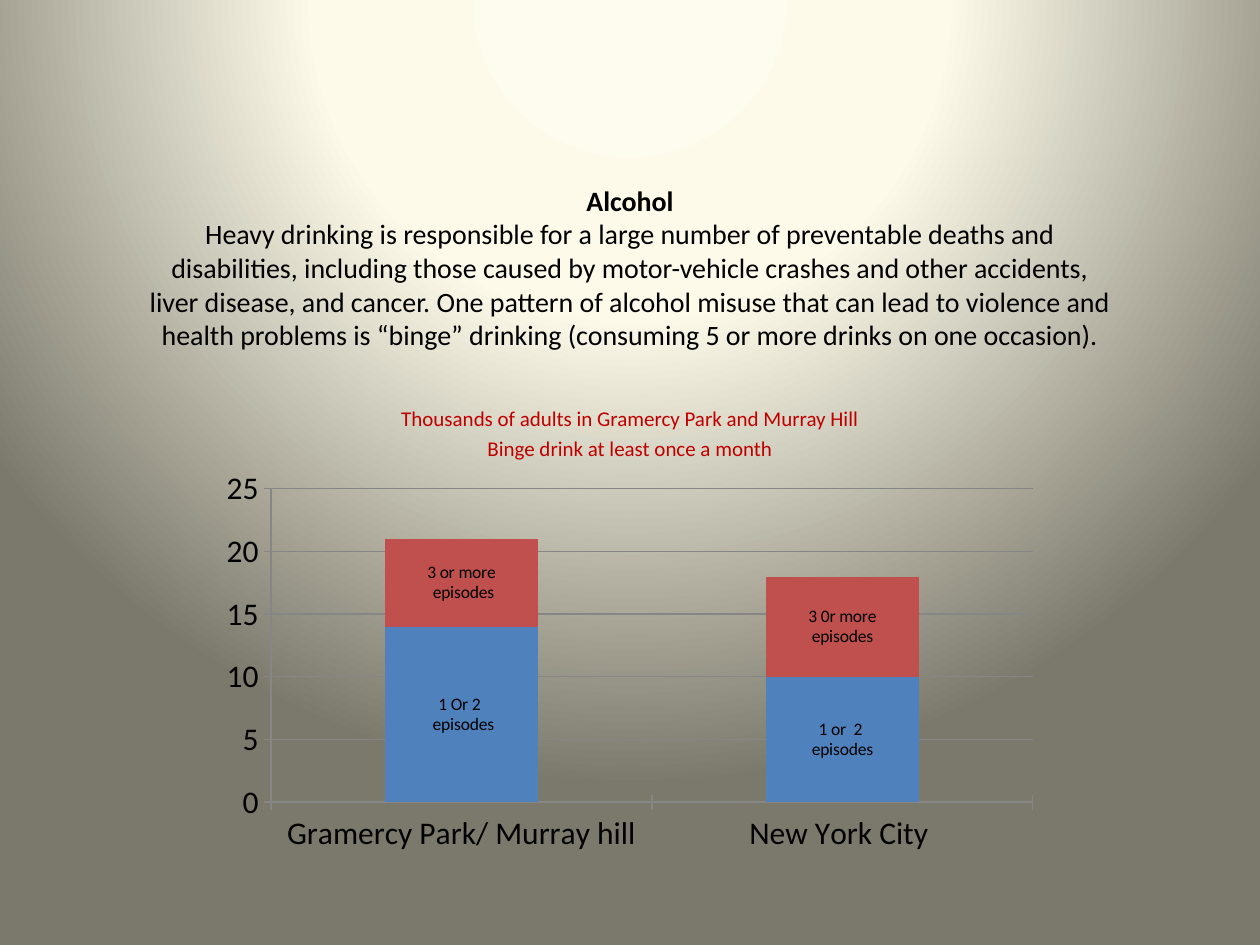
"""Build a slide on binge drinking with a stacked column chart."""
from pptx import Presentation
from pptx.chart.data import CategoryChartData
from pptx.dml.color import RGBColor
from pptx.enum.chart import XL_CHART_TYPE as ChartType, XL_LABEL_POSITION as LabelPos
from pptx.enum.chart import XL_TICK_MARK as Tick
from pptx.enum.text import MSO_ANCHOR as Anchor, PP_ALIGN as Align
from pptx.oxml import parse_xml
from pptx.oxml.ns import nsdecls, qn
from pptx.util import Cm, Pt

FONT = "Calibri"
BLACK = RGBColor(0x00, 0x00, 0x00)
RED = RGBColor(0xC0, 0x00, 0x00)
BLUE_BAR = RGBColor(0x4F, 0x81, 0xBD)
RED_BAR = RGBColor(0xC0, 0x50, 0x4D)
GRAY = RGBColor(0x86, 0x86, 0x86)
BACKGROUND = [(0, "FEFCEE"), (40, "FDFAEA"), (100, "7B796B")]

HEADING = "Alcohol"
BODY = [
    "Heavy drinking is responsible for a large number of preventable deaths and",
    "disabilities, including those caused by motor-vehicle crashes and other accidents,",
    "liver disease, and cancer. One pattern of alcohol misuse that can lead to violence and",
    "health problems is “binge” drinking (consuming 5 or more drinks on one occasion).",
]
SUBTITLE = [
    "Thousands of adults in Gramercy Park and Murray Hill",
    "Binge drink at least once a month",
]
CATEGORIES = ["Gramercy Park/ Murray hill", "New York City "]
SERIES = [
    ("Series 1", (14, 10), BLUE_BAR,
     [("1 Or 2 ", " episodes"), ("1 or  2 ", "episodes")]),
    ("Series 2", (7, 8), RED_BAR,
     [("3 or more", " episodes"), ("3 0r more", "episodes")]),
]


def style(font, size, color, bold=False):
    font.name, font.size, font.bold = FONT, Pt(size), bold
    font.color.rgb = color


def add_run(p, text, size, color, bold=False):
    r = p.add_run()
    r.text = text
    style(r.font, size, color, bold)


def place(sp, left, top, width, height):
    sp.left, sp.top, sp.width, sp.height = map(Cm, (left, top, width, height))


def write_paragraphs(tf, lines, size, color, space=0):
    for i, line in enumerate(lines):
        p = tf.add_paragraph() if i else tf.paragraphs[0]
        p.alignment = Align.CENTER
        p.space_before = Pt(space if i else 0)
        add_run(p, line, size, color)


def set_background(s):
    s.background.fill.solid()
    bg = s.element.find(".//" + qn("p:bgPr"))
    stops = "".join(f'<a:gs pos="{pos * 1000}"><a:srgbClr val="{color}"/></a:gs>'
                    for pos, color in BACKGROUND)
    bg.replace(bg[0], parse_xml(
        f'<a:gradFill {nsdecls("a")} rotWithShape="1"><a:gsLst>{stops}</a:gsLst>'
        '<a:path path="circle"><a:fillToRect l="50000" t="-80000" r="50000" b="180000"/>'
        '</a:path></a:gradFill>'))


def add_title(s):
    sp = s.shapes.title
    place(sp, 1.9, 2.75, 21.6, 5.28)
    sp.text_frame.vertical_anchor = Anchor.MIDDLE
    p = sp.text_frame.paragraphs[0]
    p.alignment = Align.CENTER
    add_run(p, HEADING, 16, BLACK, True)
    for line in BODY:
        p.add_line_break()
        add_run(p, line, 16, BLACK)
    for props in p._p.iterfind(qn("a:br")):
        props.append(parse_xml(f'<a:rPr {nsdecls("a")} sz="1600"/>'))


def add_subtitle(s):
    sp = s.placeholders[1]
    place(sp, 3.81, 8.05, 17.78, 7.62)
    sp.text_frame.vertical_anchor = Anchor.TOP
    write_paragraphs(sp.text_frame, SUBTITLE, 12, RED, 2.4)


def add_drinking_chart(s):
    data = CategoryChartData()
    data.categories = CATEGORIES
    for name, values, _, _ in SERIES:
        data.add_series(name, values)
    chart = s.shapes.add_chart(ChartType.COLUMN_STACKED, Cm(4.23), Cm(9.31),
                               Cm(16.93), Cm(8.04), data).chart
    chart.has_legend = chart.has_title = False
    style(chart.font, 18, BLACK)
    for axis in (chart.category_axis, chart.value_axis):
        axis.major_tick_mark = Tick.CROSS
        axis.format.line.color.rgb = GRAY
    values_axis = chart.value_axis
    values_axis.minimum_scale, values_axis.maximum_scale = 0, 25
    values_axis.major_unit = 5
    values_axis.has_major_gridlines = True
    values_axis.major_gridlines.format.line.color.rgb = GRAY
    plot = chart.plots[0]
    plot.gap_width, plot.overlap = 150, 100
    plot.vary_by_categories = False
    for series, (_, _, color, labels) in zip(plot.series, SERIES):
        series.format.fill.solid()
        series.format.fill.fore_color.rgb = color
        for i, lines in enumerate(labels):
            label = series.points[i].data_label
            write_paragraphs(label.text_frame, lines, 10, BLACK)
            label.position = LabelPos.CENTER


def main():
    prs = Presentation()
    prs.slide_width, prs.slide_height = Cm(25.4), Cm(19.05)
    s = prs.slides.add_slide(prs.slide_layouts[0])
    set_background(s)
    add_title(s)
    add_subtitle(s)
    add_drinking_chart(s)
    prs.save("out.pptx")


if __name__ == "__main__":
    main()
